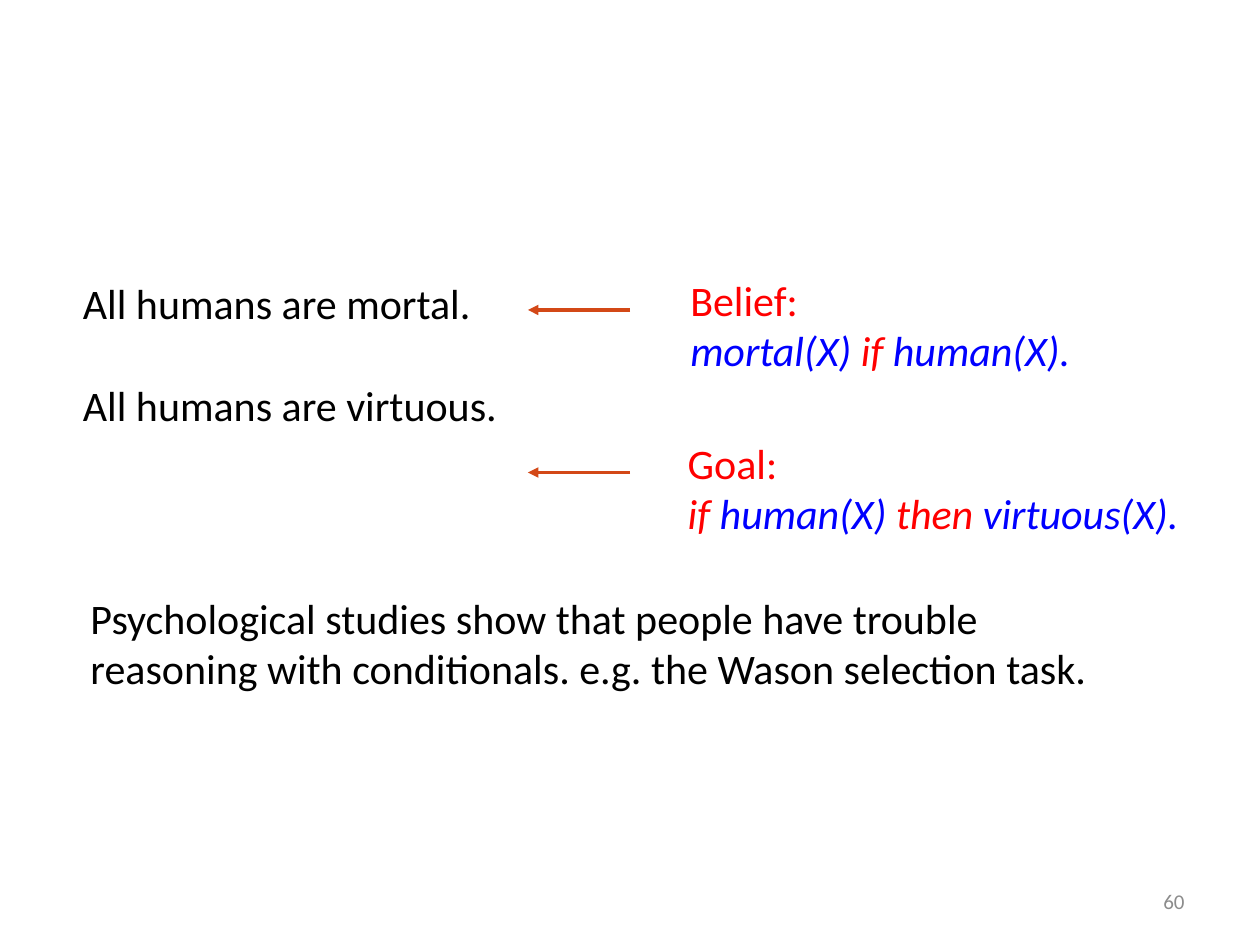
from dataclasses import dataclass

import pptx
import pptx.dml.color
import pptx.enum.shapes
import pptx.enum.text
import pptx.oxml.ns
import pptx.util
from lxml import etree

ALIGN = pptx.enum.text.PP_ALIGN
ANCHOR = pptx.enum.text.MSO_ANCHOR
SLIDE_WIDTH = pptx.util.Inches(10)
SLIDE_HEIGHT = pptx.util.Inches(7.5)


@dataclass(frozen=True)
class Theme:
    font: str = "Calibri"
    text: str = "000000"
    keyword: str = "FF0000"
    predicate: str = "0000FF"
    arrow: str = "D34817"
    muted: str = "8C8C8C"
    body_size: float = 24
    number_size: float = 12
    arrow_width: float = 2
    blank_line: float = 29.3


THEME = Theme()


@dataclass(frozen=True)
class Words:
    text: str
    color: str = THEME.text
    italic: bool = False


@dataclass(frozen=True)
class TextBlock:
    """Lines of words in a box whose place is given in shares of the slide."""
    left: float
    top: float
    width: float
    height: float
    lines: tuple[tuple[Words, ...], ...]
    size: float = THEME.body_size
    gap: float = 0
    wrap: bool = True
    align: ALIGN = ALIGN.LEFT
    anchor: ANCHOR = ANCHOR.TOP


def across(share: float) -> int:
    return round(SLIDE_WIDTH * share)


def down(share: float) -> int:
    return round(SLIDE_HEIGHT * share)


def keyword(text: str, italic: bool = True) -> Words:
    return Words(text, THEME.keyword, italic)


def predicate(text: str) -> Words:
    return Words(text, THEME.predicate, True)


def draw_text(slide, block: TextBlock) -> None:
    frame = slide.shapes.add_textbox(
        across(block.left), down(block.top), across(block.width), down(block.height)
    ).text_frame
    frame.word_wrap = block.wrap
    frame.vertical_anchor = block.anchor
    for index, line in enumerate(block.lines):
        paragraph = frame.add_paragraph() if index else frame.paragraphs[0]
        paragraph.alignment = block.align
        paragraph.space_before = pptx.util.Pt(block.gap if index else 0)
        for words in line:
            run = paragraph.add_run()
            run.text = words.text
            run.font.color.rgb = pptx.dml.color.RGBColor.from_string(words.color)
            font_format = {
                "name": THEME.font,
                "size": pptx.util.Pt(block.size),
                "italic": words.italic,
            }
            for attribute, value in font_format.items():
                setattr(run.font, attribute, value)


def draw_arrow(slide, start: float, end: float, level: float) -> None:
    arrow = slide.shapes.add_connector(
        pptx.enum.shapes.MSO_CONNECTOR.STRAIGHT,
        across(start), down(level), across(end), down(level),
    )
    arrow.line.color.rgb = pptx.dml.color.RGBColor.from_string(THEME.arrow)
    arrow.line.width = pptx.util.Pt(THEME.arrow_width)
    qn = pptx.oxml.ns.qn
    etree.SubElement(arrow.line._get_or_add_ln(), qn("a:tailEnd"), type="triangle")
    etree.SubElement(arrow._element.spPr, qn("a:effectLst"))


BELIEF_TOP, GOAL_TOP = 0.284, 0.456
ARROW_DROP = 0.044
RULE_HEIGHT = 0.121

TEXT_BLOCKS = (
    TextBlock(0.717, 0.927, 0.233, 0.053, ((Words("60", THEME.muted),),),
              size=THEME.number_size, align=ALIGN.RIGHT, anchor=ANCHOR.MIDDLE),
    TextBlock(0.056, 0.287, 0.389, 0.471, (
        (Words("All humans are mortal."),),
        (Words("All humans are virtuous."),),
    ), gap=THEME.blank_line),
    TextBlock(0.538, BELIEF_TOP, 0.325, RULE_HEIGHT, (
        (keyword("Belief:", italic=False),),
        (predicate("mortal(X) "), keyword("if "), predicate("human(X).")),
    ), wrap=False),
    TextBlock(0.536, GOAL_TOP, 0.488, RULE_HEIGHT, (
        (keyword("Goal:", italic=False),),
        (keyword("if "), predicate("human(X) "),
         keyword("then "), predicate("virtuous(X).")),
    )),
    TextBlock(0.062, 0.62, 0.82, RULE_HEIGHT, (
        (Words("Psychological studies show that people have trouble"),),
        (Words("reasoning with conditionals. e.g. the Wason selection task."),),
    ), wrap=False),
)


def main() -> None:
    deck = pptx.Presentation()
    deck.slide_width, deck.slide_height = SLIDE_WIDTH, SLIDE_HEIGHT
    slide = deck.slides.add_slide(deck.slide_layouts[6])
    for block in TEXT_BLOCKS:
        draw_text(slide, block)
    for rule_top in (BELIEF_TOP, GOAL_TOP):
        draw_arrow(slide, 0.5, 0.419, rule_top + ARROW_DROP)
    deck.save("out.pptx")


if __name__ == "__main__":
    main()
